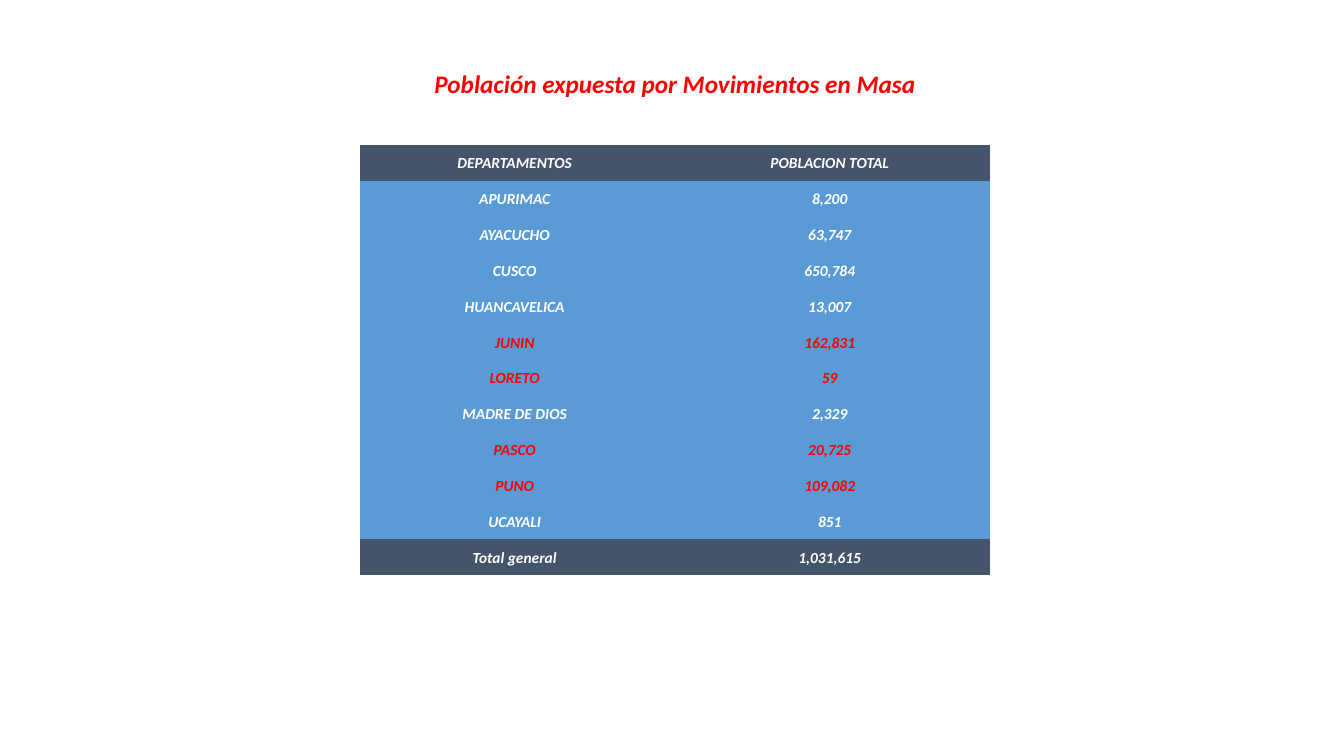
from pptx import Presentation
from pptx.dml.color import RGBColor
from pptx.enum.text import MSO_ANCHOR, MSO_AUTO_SIZE, PP_ALIGN
from pptx.util import Inches, Pt

CENTER = PP_ALIGN.CENTER
MIDDLE = MSO_ANCHOR.MIDDLE
GROW = MSO_AUTO_SIZE.SHAPE_TO_FIT_TEXT
PLAIN = "{2D5ABB26-0587-4C30-8999-92F81FD0307C}"  # no style, no grid
FONT = "Calibri"
COLORS = {"red": "FF0000", "white": "FFFFFF", "dark": "44546A", "blue": "5B9BD5"}

TITLE = "Población expuesta por Movimientos en Masa"
ROWS = [
    ("DEPARTAMENTOS", "POBLACION TOTAL"),
    ("APURIMAC", "8,200"),
    ("AYACUCHO", "63,747"),
    ("CUSCO", "650,784"),
    ("HUANCAVELICA", "13,007"),
    ("JUNIN", "162,831"),
    ("LORETO", "59"),
    ("MADRE DE DIOS", "2,329"),
    ("PASCO", "20,725"),
    ("PUNO", "109,082"),
    ("UCAYALI", "851"),
    ("Total general", "1,031,615"),
]
MARKED = {"JUNIN", "LORETO", "PASCO", "PUNO"}


def color(name):
    return RGBColor.from_string(COLORS[name])


def set_text(frame, text, size, tint):
    """Write one centred line in bold italics."""
    frame.text = text
    line = frame.paragraphs[0]
    line.alignment = CENTER
    font = line.runs[0].font
    font.name, font.size = FONT, Pt(size)
    font.bold = font.italic = True
    font.color.rgb = color(tint)


def add_title(slide, left, top, width, height):
    box = slide.shapes.add_textbox(
        Inches(left), Inches(top), Inches(width), Inches(height))
    frame = box.text_frame
    frame.word_wrap = False
    frame.auto_size = GROW
    set_text(frame, TITLE, 18, "red")


def fill_cell(cell, text, fill, tint):
    cell.fill.solid()
    cell.fill.fore_color.rgb = color(fill)
    cell.vertical_anchor = MIDDLE
    cell.margin_left = cell.margin_right = cell.margin_top = Inches(0.01)
    cell.margin_bottom = 0
    set_text(cell.text_frame, text, 11, tint)


def add_grid(slide, left, top, widths, height):
    shape = slide.shapes.add_table(
        len(ROWS), len(widths), Inches(left), Inches(top),
        Inches(sum(widths)), Inches(height))
    shape.element.xpath(".//a:tableStyleId")[0].text = PLAIN
    table = shape.table
    for col, width in zip(table.columns, widths):
        col.width = Inches(width)
    for r, row in enumerate(ROWS):
        fill = "dark" if r in (0, len(ROWS) - 1) else "blue"
        tint = "red" if row[0] in MARKED else "white"
        for c, text in enumerate(row):
            fill_cell(table.cell(r, c), text, fill, tint)


def main():
    deck = Presentation()
    deck.slide_width, deck.slide_height = Inches(13.33), Inches(7.5)
    slide = deck.slides.add_slide(deck.slide_layouts[6])
    add_title(slide, 4.18, 0.63, 5.03, 0.4)
    add_grid(slide, 3.57, 1.44, (3.07, 3.18), 4.27)
    deck.save("out.pptx")


if __name__ == "__main__":
    main()
